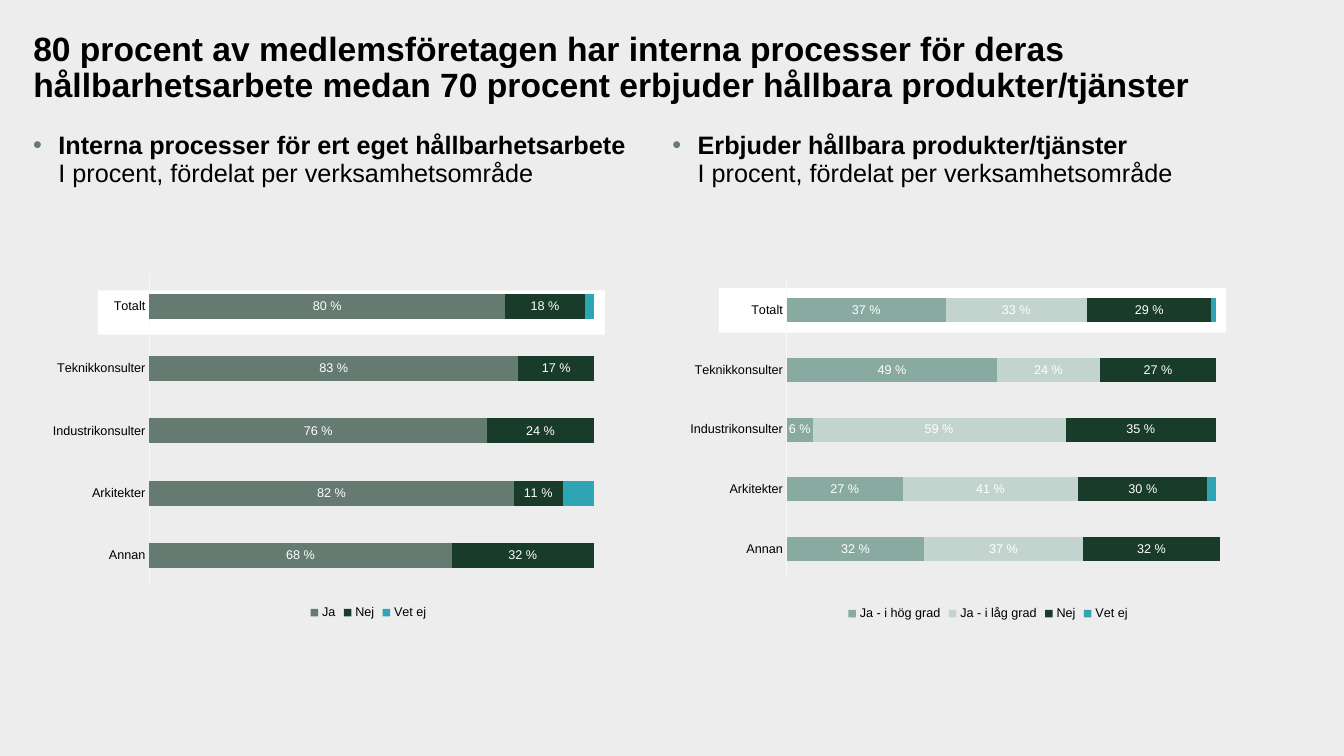
import lxml.etree
import pptx
import pptx.chart.data
import pptx.dml.color
import pptx.enum.chart
import pptx.enum.shapes
import pptx.enum.text
import pptx.oxml
import pptx.oxml.ns
import pptx.util

Inches = pptx.util.Inches
RGBColor = pptx.dml.color.RGBColor
qn = pptx.oxml.ns.qn

BACKGROUND = RGBColor(0xED, 0xED, 0xED)
WHITE = RGBColor(0xFF, 0xFF, 0xFF)
BLACK = RGBColor(0, 0, 0)
AXIS_LINE = RGBColor(0xF8, 0xF8, 0xF8)
GREY_GREEN = RGBColor(0x65, 0x7B, 0x71)
DARK_GREEN = RGBColor(0x19, 0x3C, 0x2A)
TURQUOISE = RGBColor(0x2F, 0xA5, 0xB3)
SAGE = RGBColor(0x88, 0xAA, 0xA0)
PALE_SAGE = RGBColor(0xC3, 0xD4, 0xCF)

AREAS = ["Totalt", "Teknikkonsulter", "Industrikonsulter", "Arkitekter", "Annan"]
TITLE = ("80 procent av medlemsföretagen har interna processer för deras "
         "hållbarhetsarbete medan 70 procent erbjuder hållbara produkter/tjänster")
SUBTITLE = "I procent, fördelat per verksamhetsområde"

# Boxes are (left, top, width, height) in inches; plot areas are chart fractions.
PANELS = [
    {
        "heading": "Interna processer för ert eget hållbarhetsarbete ",
        "heading_box": (0.33, 1.32, 6.34, 0.7),
        "total_band": (0.97, 2.88, 5.03, 0.44),
        "chart_box": (0.4, 2.65, 6.51, 3.54),
        "plot_area": (0.166, 0.022, 0.813, 0.874),
        "answers": [
            ("Ja", GREY_GREEN, (0.8, 0.83, 0.76, 0.82, 0.68)),
            ("Nej", DARK_GREEN, (0.18, 0.17, 0.24, 0.11, 0.32)),
            ("Vet ej", TURQUOISE, (0.02, 0, 0, 0.07, 0)),
        ],
    },
    {
        "heading": "Erbjuder hållbara produkter/tjänster",
        "heading_box": (6.67, 1.32, 6.34, 0.7),
        "total_band": (7.13, 2.86, 5.03, 0.44),
        "chart_box": (6.69, 2.63, 6.22, 3.57),
        "plot_area": (0.179, 0.043, 0.821, 0.829),
        "answers": [
            ("Ja - i hög grad", SAGE, (0.37, 0.49, 0.06, 0.27, 0.32)),
            ("Ja - i låg grad", PALE_SAGE, (0.33, 0.24, 0.59, 0.41, 0.37)),
            ("Nej", DARK_GREEN, (0.29, 0.27, 0.35, 0.3, 0.32)),
            ("Vet ej", TURQUOISE, (0.01, 0, 0, 0.02, 0)),
        ],
    },
]


def apply(target, formats):
    for name, value in formats.items():
        setattr(target, name, value)


def style_font(font, size, color, bold=False):
    apply(font, {"name": "Arial", "size": pptx.util.Pt(size), "bold": bold})
    font.color.rgb = color


def prepare_frame(frame):
    apply(frame, {
        "margin_left": 0, "margin_top": 0, "margin_right": 0, "margin_bottom": 0,
        "word_wrap": True,
        "auto_size": pptx.enum.text.MSO_AUTO_SIZE.NONE,
        "vertical_anchor": pptx.enum.text.MSO_ANCHOR.TOP,
    })


def add_title(slide, box):
    title = slide.shapes.title
    apply(title, dict(zip(("left", "top", "width", "height"), map(Inches, box))))
    prepare_frame(title.text_frame)
    title.text_frame.text = TITLE
    paragraph = title.text_frame.paragraphs[0]
    apply(paragraph, {"line_spacing": 0.9, "alignment": pptx.enum.text.PP_ALIGN.LEFT})
    style_font(paragraph.runs[0].font, 24, BLACK, bold=True)


def add_bullet(paragraph, color):
    properties = paragraph._p.get_or_add_pPr()
    properties.set("marL", str(Inches(0.25)))
    properties.set("indent", str(-Inches(0.25)))
    bullet_color = lxml.etree.SubElement(properties, qn("a:buClr"))
    lxml.etree.SubElement(bullet_color, qn("a:srgbClr")).set("val", str(color))
    lxml.etree.SubElement(properties, qn("a:buFont")).set("typeface", "Arial")
    lxml.etree.SubElement(properties, qn("a:buChar")).set("char", "•")


def add_heading(slide, box, heading):
    frame = slide.shapes.add_textbox(*map(Inches, box)).text_frame
    prepare_frame(frame)
    paragraph = frame.paragraphs[0]
    add_bullet(paragraph, GREY_GREEN)
    paragraph.line_spacing = 0.9
    question = paragraph.add_run()
    question.text = heading
    style_font(question.font, 18, BLACK, bold=True)
    paragraph.add_line_break()
    subtitle = paragraph.add_run()
    subtitle.text = SUBTITLE
    style_font(subtitle.font, 18, BLACK)


def add_total_band(slide, box):
    band = slide.shapes.add_shape(
        pptx.enum.shapes.MSO_SHAPE.RECTANGLE, *map(Inches, box))
    band.shadow.inherit = False
    band.fill.solid()
    band.fill.fore_color.rgb = WHITE
    band.line.fill.background()


def fix_plot_area(chart, fractions):
    """Pin the inner plot area to fractions of the chart box."""
    plot_area = chart._chartSpace.chart.plotArea
    for automatic in plot_area.findall(qn("c:layout")):
        plot_area.remove(automatic)
    layout = lxml.etree.Element(qn("c:layout"))
    manual = lxml.etree.SubElement(layout, qn("c:manualLayout"))
    settings = [("layoutTarget", "inner"), ("xMode", "edge"), ("yMode", "edge"),
                *zip("xywh", fractions)]
    for tag, value in settings:
        lxml.etree.SubElement(manual, qn(f"c:{tag}")).set("val", str(value))
    plot_area.insert(0, layout)


def style_axes(chart):
    areas, shares = chart.category_axis, chart.value_axis
    no_ticks = pptx.enum.chart.XL_TICK_MARK.NONE
    apply(areas, {"reverse_order": True, "major_tick_mark": no_ticks,
                  "minor_tick_mark": no_ticks, "has_major_gridlines": False})
    style_font(areas.tick_labels.font, 9, BLACK)
    areas.format.line.color.rgb = AXIS_LINE
    areas.format.line.width = pptx.util.Pt(0.75)
    apply(shares, {"visible": False, "has_major_gridlines": False,
                   "minimum_scale": 0, "maximum_scale": 1.2})


def add_answer_chart(slide, box, plot_area, answers):
    shares = pptx.chart.data.CategoryChartData(number_format="0.00%")
    shares.categories = AREAS
    for answer, _, values in answers:
        shares.add_series(answer, values)
    chart = slide.shapes.add_chart(
        pptx.enum.chart.XL_CHART_TYPE.BAR_STACKED, *map(Inches, box), shares).chart
    style_font(chart.font, 10, WHITE)
    apply(chart, {"has_title": False, "has_legend": True})
    apply(chart.legend, {"position": pptx.enum.chart.XL_LEGEND_POSITION.BOTTOM,
                         "include_in_layout": False})
    style_font(chart.legend.font, 9, BLACK)
    style_axes(chart)
    fix_plot_area(chart, plot_area)

    bars = chart.plots[0]
    apply(bars, {"gap_width": 150, "overlap": 100, "vary_by_categories": False})
    for series, (answer, color, _) in zip(bars.series, answers):
        series.format.fill.solid()
        series.format.fill.fore_color.rgb = color
        series.invert_if_negative = False
        if answer != "Vet ej":
            labels = series.data_labels
            apply(labels, {
                "show_value": True, "number_format": "0\\ %",
                "number_format_is_linked": False,
                "position": pptx.enum.chart.XL_LABEL_POSITION.CENTER})
            style_font(labels.font, 9, WHITE)


def add_panel(slide, panel):
    add_total_band(slide, panel["total_band"])
    add_heading(slide, panel["heading_box"], panel["heading"])
    add_answer_chart(slide, panel["chart_box"], panel["plot_area"], panel["answers"])


def main():
    deck = pptx.Presentation()
    apply(deck, {"slide_width": Inches(13.33), "slide_height": Inches(7.5)})
    slide = deck.slides.add_slide(deck.slide_layouts[5])
    slide.background.fill.solid()
    slide.background.fill.fore_color.rgb = BACKGROUND
    add_title(slide, (0.33, 0.32, 12.68, 0.56))
    for panel in PANELS:
        add_panel(slide, panel)
    deck.save("out.pptx")


if __name__ == "__main__":
    main()
